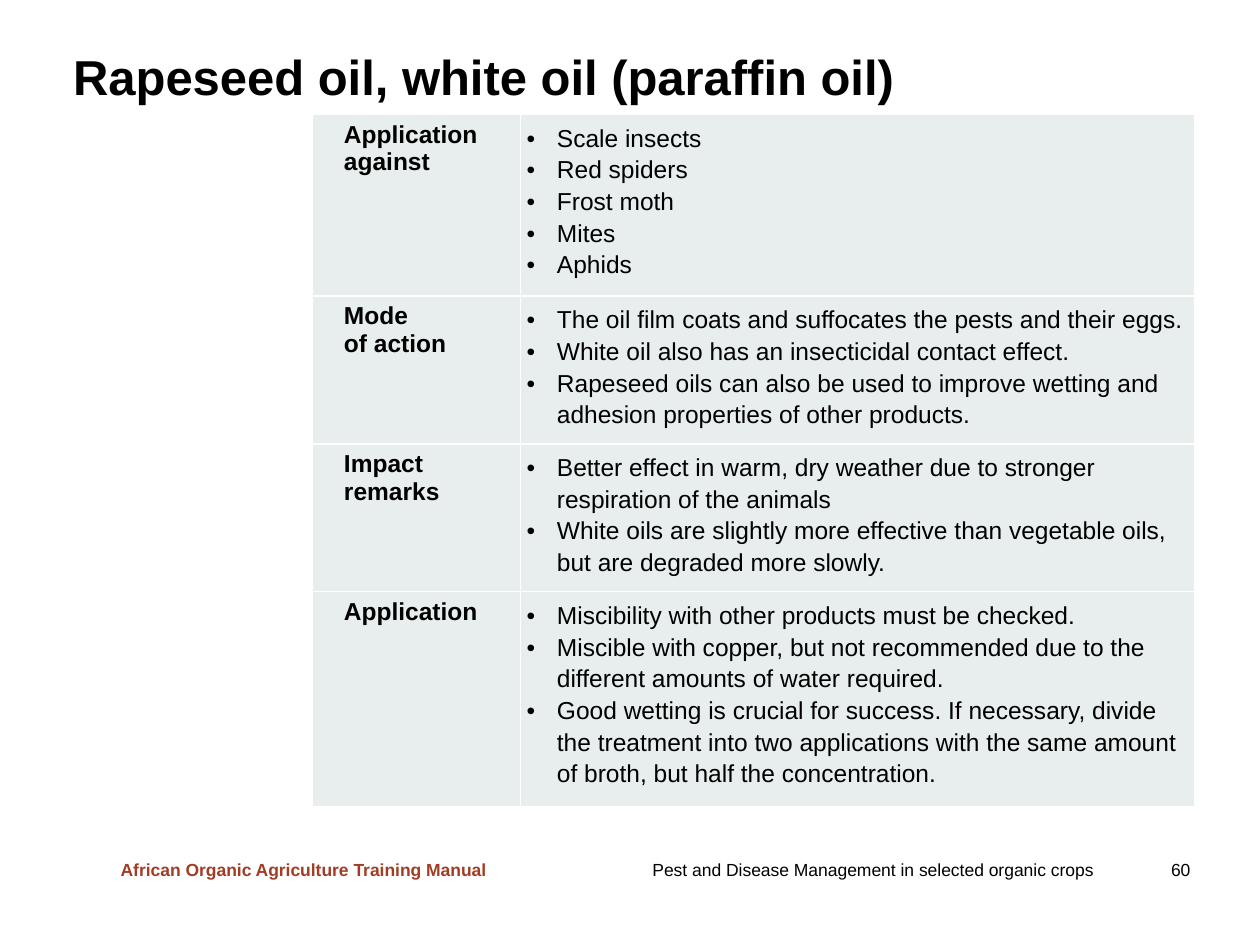
from copy import deepcopy

from lxml import etree
from pptx import Presentation
from pptx import util as u
from pptx.dml.color import RGBColor
from pptx.enum import text
from pptx.oxml import ns

COLORS = {"ink": "000000", "manual": "A23D25", "cell": "E7EEED", "rule": "FFFFFF"}
TITLE = {"size": u.Pt(28), "bold": True}
LABEL = {"size": u.Pt(14), "bold": True}
BODY = {"size": u.Pt(14), "bold": False}
FOOTER = {"size": u.Pt(10), "bold": False}
MANUAL = {"size": u.Pt(10), "bold": True}

ROWS = [
    ("Application against", 1.35,
     ["Scale insects", "Red spiders", "Frost moth", "Mites", "Aphids"]),
    ("Mode \vof action", 1.1,
     ["The oil film coats and suffocates the pests and their eggs.",
      "White oil also has an insecticidal contact effect.",
      "Rapeseed oils can also be used to improve wetting and adhesion "
      "properties of other products."]),
    ("Impact remarks", 1.1,
     ["Better effect in warm, dry weather due to stronger respiration of the animals",
      "White oils are slightly more effective than vegetable oils, "
      "but are degraded more slowly."]),
    ("Application", 1.6,
     ["Miscibility with other products must be checked.",
      "Miscible with copper, but not recommended due to the different "
      "amounts of water required.",
      "Good wetting is crucial for success. If necessary, divide the treatment "
      "into two applications with the same amount of broth, but half the "
      "concentration."]),
]


def add_xml(parent, tag, **attrs):
    return etree.SubElement(parent, ns.qn(tag), attrs)


class SlideBuilder:
    font = "Arial"
    margin = u.Inches(0.05)

    def __init__(self, prs):
        self.s = prs.slides.add_slide(prs.slide_layouts[6])

    def paragraph(self, p, content, style, color="ink"):
        p.text = content
        for r in p.runs:
            for name, value in {"name": self.font, **style}.items():
                setattr(r.font, name, value)
            r.font.color.rgb = RGBColor.from_string(COLORS[color])
        for br in p._p.findall(ns.qn("a:br")):
            br.append(deepcopy(p.runs[0]._r.rPr))

    def textbox(self, box, content, style, color="ink", wrap=True, tab=None,
                anchor=text.MSO_ANCHOR.MIDDLE, **margins):
        sp = self.s.shapes.add_textbox(*map(u.Inches, box))
        tf = sp.text_frame
        for name, value in {"word_wrap": wrap, "vertical_anchor": anchor, **margins}.items():
            setattr(tf, name, value)
        p = tf.paragraphs[0]
        if tab:
            tabs = add_xml(p._p.get_or_add_pPr(), "a:tabLst")
            add_xml(tabs, "a:tab", pos=str(u.Inches(tab)), algn="r")
        self.paragraph(p, content, style, color)

    def cell(self, cell, paragraphs, style, left, hanging=0, bullet=None, **spacing):
        for side in ("left", "right", "top", "bottom"):
            setattr(cell, f"margin_{side}", self.margin)
        tf = cell.text_frame
        for i, content in enumerate(paragraphs):
            p = tf.add_paragraph() if i else tf.paragraphs[0]
            pPr = p._p.get_or_add_pPr()
            pPr.set("marL", str(u.Inches(left)))
            pPr.set("indent", str(-u.Inches(hanging)))
            if bullet:
                add_xml(pPr, "a:buFont", typeface=self.font)
                add_xml(pPr, "a:buChar", char=bullet)
            for name, value in spacing.items():
                setattr(p, name, value)
            self.paragraph(p, content, style)
        tcPr = cell._tc.get_or_add_tcPr()
        for tag in ("a:lnL", "a:lnR", "a:lnT", "a:lnB"):
            ln = add_xml(tcPr, tag, w=str(u.Pt(1)))
            add_xml(add_xml(ln, "a:solidFill"), "a:srgbClr", val=COLORS["rule"])
        cell.fill.solid()
        cell.fill.fore_color.rgb = RGBColor.from_string(COLORS["cell"])

    def table(self, left, top, widths, rows):
        height = sum(row[1] for row in rows)
        box = map(u.Inches, (left, top, sum(widths), height))
        table = self.s.shapes.add_table(len(rows), len(widths), *box).table
        table.first_row = table.horz_banding = False
        for column, width in zip(table.columns, widths):
            column.width = u.Inches(width)
        for i, (label, row_height, points) in enumerate(rows):
            table.rows[i].height = u.Inches(row_height)
            self.cell(table.cell(i, 0), [label], LABEL, 0.2, space_after=u.Pt(3))
            self.cell(table.cell(i, 1), points, BODY, 0.24, 0.24, "•", line_spacing=1.15)


def main():
    prs = Presentation()
    prs.slide_width, prs.slide_height = u.Inches(10), u.Inches(7.5)
    slide = SlideBuilder(prs)
    slide.textbox((5.08, 6.77, 4.84, 0.27),
                  "Pest and Disease Management in selected organic crops\t60",
                  FOOTER, tab=4.27)
    slide.textbox((0.86, 6.77, 3.14, 0.27), "African Organic Agriculture Training Manual",
                  MANUAL, "manual", wrap=False, anchor=text.MSO_ANCHOR.TOP)
    slide.textbox((0.58, 0.25, 9.02, 0.76), "Rapeseed oil, white oil (paraffin oil)",
                  TITLE, margin_left=0, margin_top=0)
    slide.table(2.48, 0.91, (1.65, 5.35), ROWS)
    prs.save("out.pptx")


if __name__ == "__main__":
    main()
